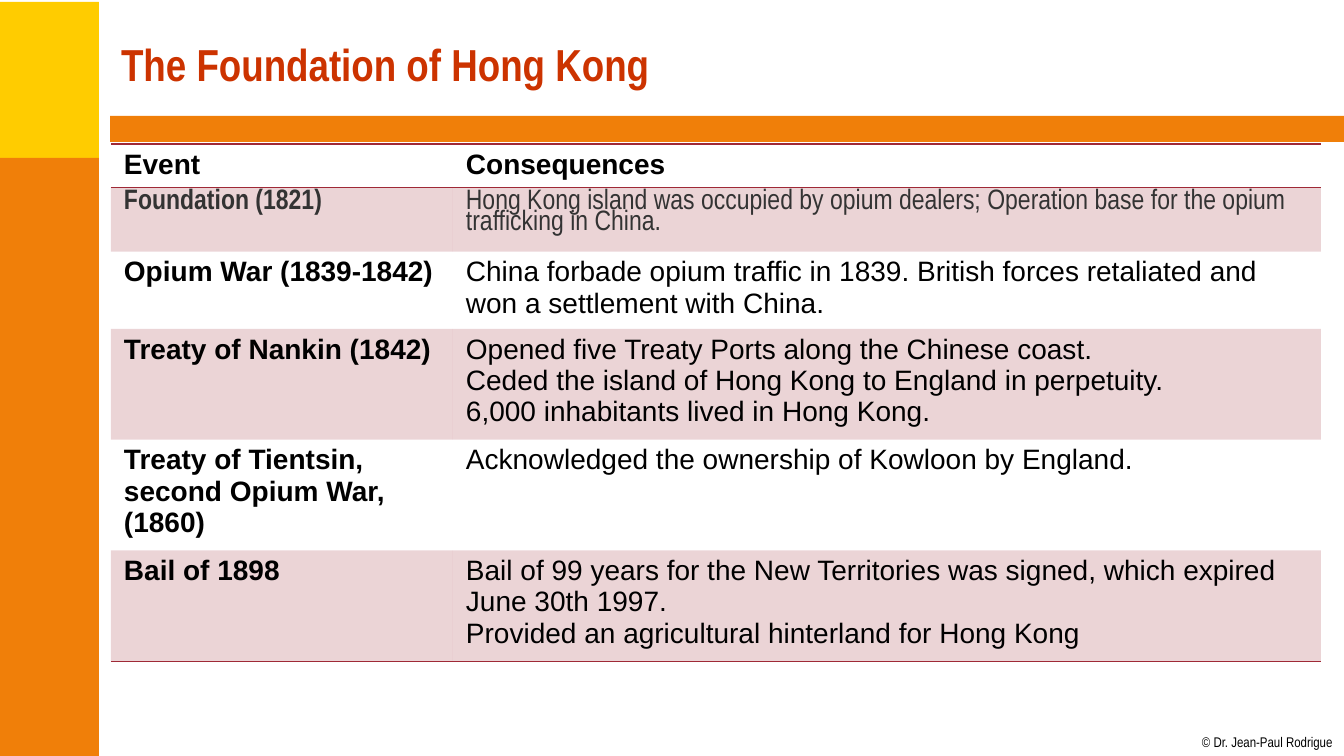
from lxml import etree
from pptx import Presentation
from pptx.dml.color import RGBColor
from pptx.enum.shapes import MSO_SHAPE as Shape
from pptx.enum.text import MSO_ANCHOR as Anchor, PP_ALIGN as Align
from pptx.oxml.ns import qn
from pptx.util import Emu, Pt

# Content
TITLE = "The Foundation of Hong Kong"
COPYRIGHT = "© Dr. Jean-Paul Rodrigue"
HEADER = ("Event", ["Consequences"])
EVENTS = [
    ("Foundation (1821)",
     ["Hong Kong island was occupied by opium dealers; Operation base for the opium trafficking in China."]),
    ("Opium War (1839-1842)",
     ["China forbade opium traffic in 1839. British forces retaliated and won a settlement with China."]),
    ("Treaty of Nankin (1842)",
     ["Opened five Treaty Ports along the Chinese coast.",
      "Ceded the island of Hong Kong to England in perpetuity.",
      "6,000 inhabitants lived in Hong Kong."]),
    ("Treaty of Tientsin, second Opium War, (1860)",
     ["Acknowledged the ownership of Kowloon by England."]),
    ("Bail of 1898",
     ["Bail of 99 years for the New Territories was signed, which expired June 30th 1997.",
      "Provided an agricultural hinterland for Hong Kong"]),
]

# Layout in px
SLIDE_WIDTH, SLIDE_HEIGHT = 1344, 756
BANDS = [
    ((-2, 2, 101, 159), "FFCC00"),
    ((-2, 158, 101, 598), "F07F09"),
    ((110, 116, 1234, 26), "F07F09"),
]
TITLE_BOX = (111, 11, 1210, 105)
COPYRIGHT_BOX = (1202, 734, 132, 17)
TABLE_LEFT, TABLE_TOP = 111, 144
COLUMN_WIDTHS = [342, 868]
ROW_HEIGHTS = [41, 64, 72, 104, 104, 103]
CELL_MARGINS = {"margin_left": 13, "margin_right": 13, "margin_top": 5, "margin_bottom": 5}

# Formats
RED = "9F2936"
NO_STYLE = "{2D5ABB26-0587-4C30-8999-92F81FD0307C}"
TITLE_FONT = {"name": "Arial Narrow", "size": Pt(32), "bold": True, "color": "CC3300"}
COPYRIGHT_FONT = {"name": "Arial Narrow", "size": Pt(10), "color": "000000"}
TABLE_FONT = {"name": "Arial", "size": Pt(20), "color": "000000"}
FOUNDATION_FONT = {"name": "Arial Narrow", "size": Pt(20), "color": "333333"}


def px(length):
    return Emu(round(length * 914400 / 100.8))


def rgb(color):
    return RGBColor.from_string(color)


def write(frame, lines, font_format, **paragraph_format):
    for index, line in enumerate(lines):
        paragraph = frame.paragraphs[0] if index == 0 else frame.add_paragraph()
        paragraph.text = line
        for key, value in paragraph_format.items():
            setattr(paragraph, key, value)
        for key, value in font_format.items():
            if key == "color":
                paragraph.font.color.rgb = rgb(value)
            else:
                setattr(paragraph.font, key, value)


def tint(cell):
    cell.fill.solid()
    cell.fill.fore_color.rgb = rgb(RED)
    color = cell.fill._xPr.find(qn("a:solidFill"))[0]
    etree.SubElement(color, qn("a:alpha"), val="20000")


def add_borders(cell, sides):
    properties = cell._tc.get_or_add_tcPr()
    for index, side in enumerate(sides):
        line = etree.Element(qn(f"a:ln{side}"), w=str(Pt(1)))
        fill = etree.SubElement(line, qn("a:solidFill"))
        etree.SubElement(fill, qn("a:srgbClr"), val=RED)
        properties.insert(index, line)


presentation = Presentation()
presentation.slide_width, presentation.slide_height = px(SLIDE_WIDTH), px(SLIDE_HEIGHT)
slide = presentation.slides.add_slide(presentation.slide_layouts[5])

# Colour bands
for box, color in BANDS:
    band = slide.shapes.add_shape(Shape.RECTANGLE, *map(px, box))
    band.shadow.inherit = False
    band.fill.solid()
    band.fill.fore_color.rgb = rgb(color)
    band.line.fill.background()

# Title
title = slide.shapes.title
title.left, title.top, title.width, title.height = map(px, TITLE_BOX)
title.text_frame.vertical_anchor = Anchor.MIDDLE
write(title.text_frame, [TITLE], TITLE_FONT, alignment=Align.LEFT)

# Copyright line
copyright_line = slide.shapes.add_textbox(*map(px, COPYRIGHT_BOX)).text_frame
copyright_line.word_wrap = False
for side in CELL_MARGINS:
    setattr(copyright_line, side, 0)
write(copyright_line, [COPYRIGHT], COPYRIGHT_FONT)

# Table of events
rows = [HEADER, *EVENTS]
table_frame = slide.shapes.add_table(
    len(rows), len(COLUMN_WIDTHS), px(TABLE_LEFT), px(TABLE_TOP),
    px(sum(COLUMN_WIDTHS)), px(sum(ROW_HEIGHTS)))
table = table_frame.table
table.first_row = table.horz_banding = False
table._tbl.tblPr.find(qn("a:tableStyleId")).text = NO_STYLE
for column, width in zip(table.columns, COLUMN_WIDTHS):
    column.width = px(width)

for row_index, (event, consequences) in enumerate(rows):
    table.rows[row_index].height = px(ROW_HEIGHTS[row_index])
    is_foundation = row_index == 1
    row_font = FOUNDATION_FONT if is_foundation else TABLE_FONT
    spacing = {"line_spacing": 0.8} if is_foundation else {}
    borders = {0: "TB", len(rows) - 1: "B"}.get(row_index, "")
    for column_index, lines in enumerate([[event], consequences]):
        cell = table.cell(row_index, column_index)
        for side, margin in CELL_MARGINS.items():
            setattr(cell, side, px(margin))
        is_bold = row_index == 0 or column_index == 0
        write(cell.text_frame, lines, {**row_font, "bold": is_bold}, **spacing)
        if row_index % 2:
            tint(cell)
        else:
            cell.fill.background()
        add_borders(cell, borders)

presentation.save("out.pptx")
